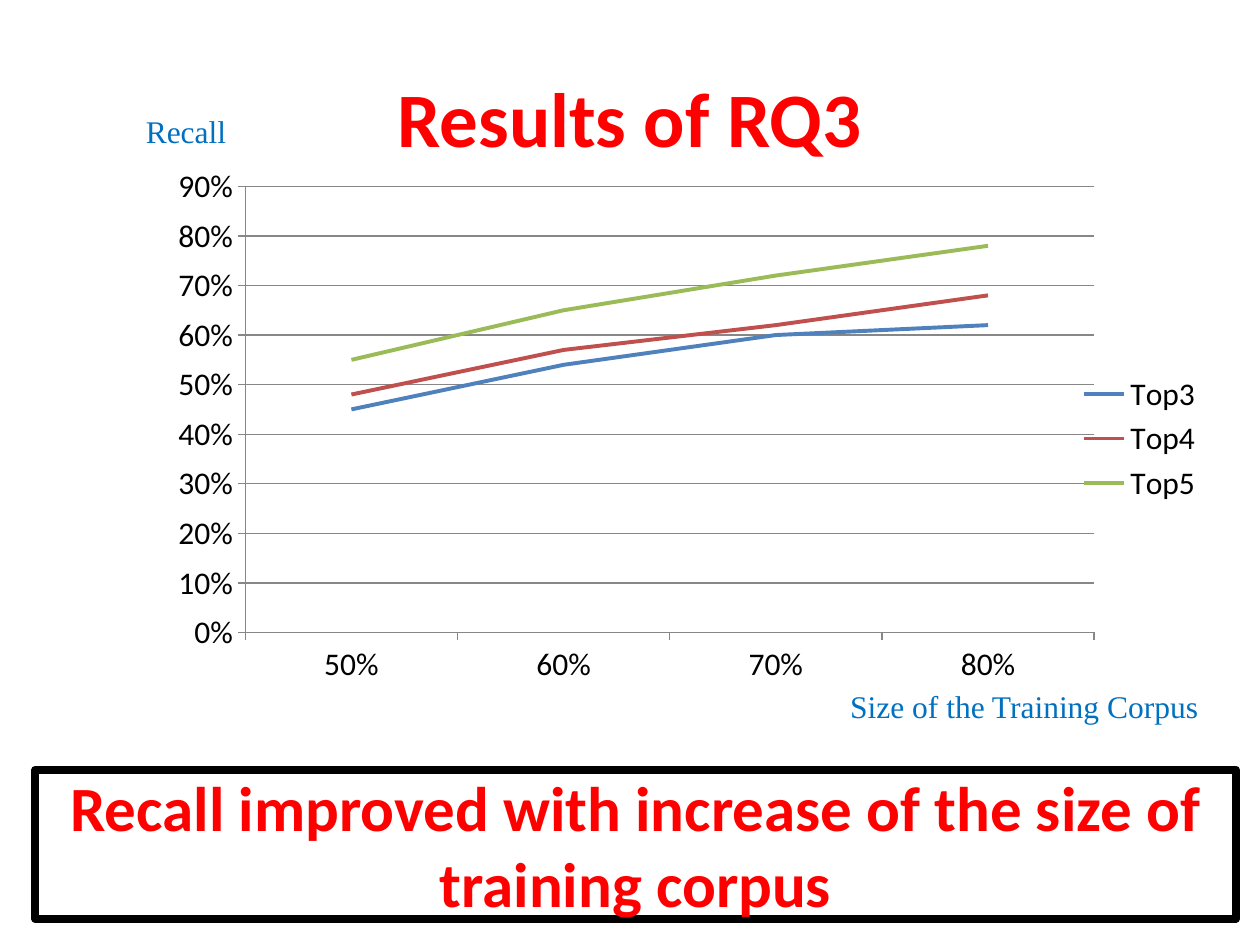
"""Build the slide with the recall results for RQ3."""
import pptx
import pptx.chart.data
import pptx.dml.color
import pptx.enum.chart
import pptx.enum.shapes
import pptx.enum.text
import pptx.oxml
import pptx.oxml.ns
import pptx.util
from pptx.util import Cm

COLORS = {"accent": "FF0000", "label": "0070C0", "text": "000000",
          "paper": "FFFFFF", "axis": "878787"}
SERIES = {
    "Top3": ("4F81BD", (0.45, 0.54, 0.60, 0.62)),
    "Top4": ("C0504D", (0.48, 0.57, 0.62, 0.68)),
    "Top5": ("9BBB59", (0.55, 0.65, 0.72, 0.78)),
}
PLOT = {"x": 0.178, "y": 0.109, "w": 0.719, "h": 0.692}
EMPHASIS = {"name": "Calibri", "bold": True}
LABEL = {"name": "Times New Roman", "size": pptx.util.Pt(18)}


def rgb(value):
    """Return the colour for a hex string."""
    return pptx.dml.color.RGBColor.from_string(value)


def set_font(font, color, formats):
    """Apply the format values and the colour to a font."""
    for name, value in formats.items():
        setattr(font, name, value)
    font.color.rgb = rgb(color)


def set_line(line, color, width):
    """Give a line its colour and its width in points."""
    line.color.rgb = rgb(color)
    line.width = pptx.util.Pt(width)


def write(s, text, color, formats, centred=False):
    """Write one formatted paragraph into a shape."""
    tf = s.text_frame
    tf.word_wrap = True
    p = tf.paragraphs[0]
    if centred:
        tf.vertical_anchor = pptx.enum.text.MSO_ANCHOR.MIDDLE
        p.alignment = pptx.enum.text.PP_ALIGN.CENTER
    r = p.add_run()
    r.text = text
    set_font(r.font, color, formats)


def add_title(slide, text):
    """Place and format the title placeholder."""
    s = slide.shapes.title
    box = {"left": Cm(0), "top": Cm(0.76), "width": Cm(25.4), "height": Cm(3.18)}
    for name, value in box.items():
        setattr(s, name, value)
    write(s, text, COLORS["accent"], EMPHASIS | {"size": pptx.util.Pt(44)}, True)


def add_label(slide, text, left, top, width):
    """Add an axis label as a text box."""
    s = slide.shapes.add_textbox(Cm(left), Cm(top), Cm(width), Cm(1.02))
    write(s, text, COLORS["label"], LABEL)


def add_banner(slide, text):
    """Add the framed conclusion."""
    s = slide.shapes.add_shape(pptx.enum.shapes.MSO_SHAPE.RECTANGLE,
                               Cm(0.71), Cm(15.52), Cm(24.21), Cm(3))
    s.shadow.inherit = False
    s.fill.solid()
    s.fill.fore_color.rgb = rgb(COLORS["paper"])
    set_line(s.line, COLORS["text"], 4.5)
    pptx.oxml.ns.qn("a:round")
    s.line._get_or_add_ln().append(pptx.oxml.parse_xml(
        f'<a:round {pptx.oxml.ns.nsdecls("a")}/>'))
    write(s, text, COLORS["accent"], EMPHASIS | {"size": pptx.util.Pt(36)}, True)


def set_plot_layout(chart):
    """Fix the inner plot area as fractions of the chart."""
    area = chart._chartSpace.chart.plotArea
    for old in area.findall(pptx.oxml.ns.qn("c:layout")):
        area.remove(old)
    modes = "".join(f'<c:{k}Mode val="edge"/>' for k in "xy")
    values = "".join(f'<c:{k} val="{v}"/>' for k, v in PLOT.items())
    area.insert(0, pptx.oxml.parse_xml(
        f'<c:layout {pptx.oxml.ns.nsdecls("c")}><c:manualLayout>'
        f'<c:layoutTarget val="inner"/>{modes}{values}'
        '</c:manualLayout></c:layout>'))


def format_axis(axis):
    """Give an axis percent labels, outer ticks and a grey line."""
    axis.tick_labels.number_format = "0%"
    axis.tick_labels.number_format_is_linked = False
    axis.major_tick_mark = pptx.enum.chart.XL_TICK_MARK.OUTSIDE
    set_line(axis.format.line, COLORS["axis"], 0.75)


def add_recall_chart(slide):
    """Add the line chart of recall by training size."""
    data = pptx.chart.data.CategoryChartData(number_format="0%")
    data.categories = (0.5, 0.6, 0.7, 0.8)
    data.categories.number_format = "0%"
    for name, (_, values) in SERIES.items():
        data.add_series(name, values)
    chart = slide.shapes.add_chart(pptx.enum.chart.XL_CHART_TYPE.LINE, Cm(0.71),
                                   Cm(2.34), Cm(23.8), Cm(13), data).chart
    set_font(chart.font, COLORS["text"],
             {"name": "Calibri", "size": pptx.util.Pt(18)})
    chart.has_title = False
    chart.has_legend = True
    chart.legend.position = pptx.enum.chart.XL_LEGEND_POSITION.RIGHT
    chart.legend.include_in_layout = False
    chart.plots[0].vary_by_categories = False
    for line in chart.plots[0].series:
        line.smooth = False
        line.marker.style = pptx.enum.chart.XL_MARKER_STYLE.NONE
        set_line(line.format.line, SERIES[line.name][0], 2.25)
    for axis in (chart.category_axis, chart.value_axis):
        format_axis(axis)
    axis = chart.value_axis
    for name, value in {"minimum_scale": 0, "maximum_scale": 0.9,
                        "major_unit": 0.1, "has_major_gridlines": True}.items():
        setattr(axis, name, value)
    set_line(axis.major_gridlines.format.line, COLORS["axis"], 0.75)
    set_plot_layout(chart)


def main():
    """Build and save the slide."""
    prs = pptx.Presentation()
    prs.slide_width, prs.slide_height = Cm(25.4), Cm(19.05)
    slide = prs.slides.add_slide(prs.slide_layouts[5])
    add_title(slide, "Results of RQ3")
    add_recall_chart(slide)
    add_label(slide, "Recall", 2.69, 2.13, 2.39)
    add_label(slide, "Size of the Training Corpus", 16.89, 13.72, 8.51)
    add_banner(slide, "Recall improved with increase of the size of training corpus")
    prs.save("out.pptx")


if __name__ == "__main__":
    main()
